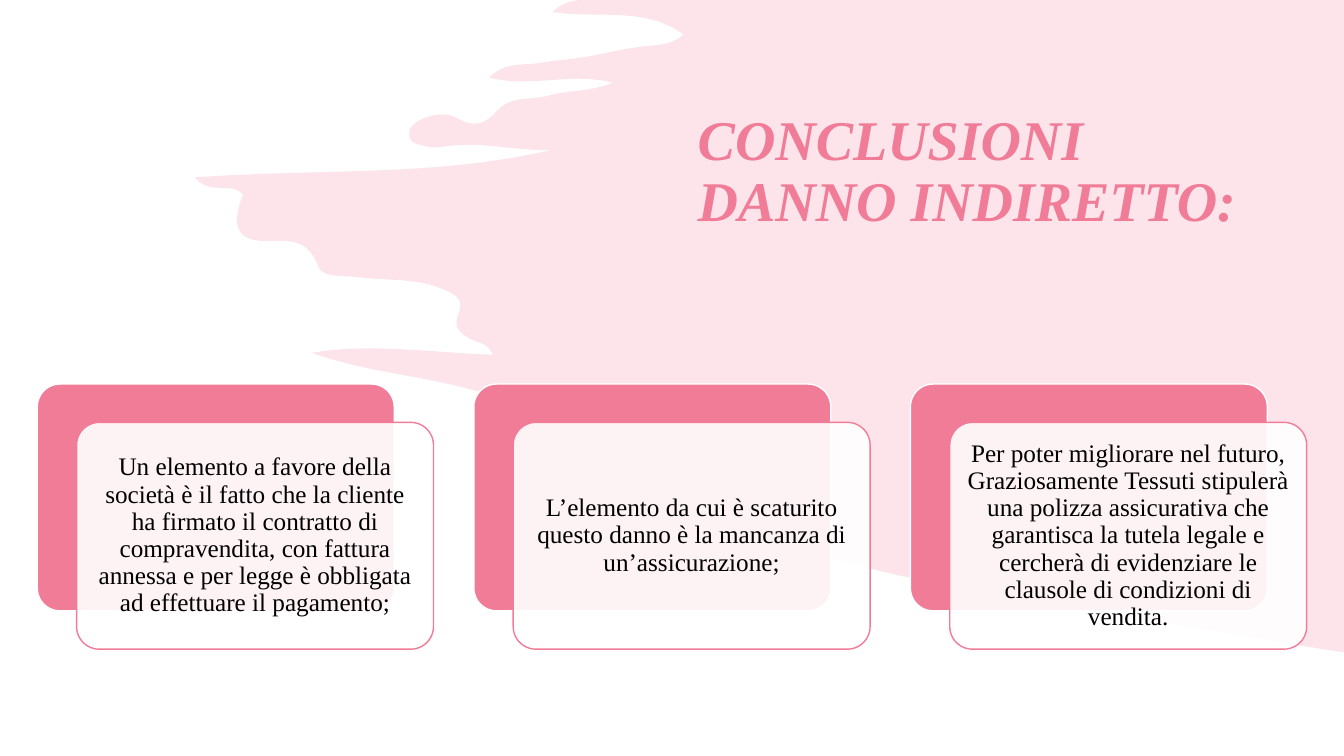
from lxml.etree import SubElement
from pptx import Presentation
from pptx.dml.color import RGBColor
from pptx.enum.shapes import MSO_SHAPE
from pptx.enum.text import MSO_ANCHOR, MSO_AUTO_SIZE, PP_ALIGN
from pptx.oxml.ns import qn
from pptx.util import Inches, Pt

PINK, WHITE, BLACK = "F07C98", "FFFFFF", "000000"
FONT = "Times New Roman"


def paint(shape, fill, alpha=100, line=None):
    """Set fill, opacity in percent and outline of a shape."""
    shape.shadow.inherit = False
    shape.fill.solid()
    shape.fill.fore_color.rgb = RGBColor.from_string(fill)
    if alpha < 100:
        color = shape.fill._xPr.find(qn("a:solidFill"))[0]
        SubElement(color, qn("a:alpha"), val=str(alpha * 1000))
    if line:
        shape.line.color.rgb = RGBColor.from_string(line)
        shape.line.width = Pt(1)
    else:
        shape.line.fill.background()


def write(shape, text, size, color, align, after):
    """Write one paragraph, vertically centred."""
    frame = shape.text_frame
    frame.word_wrap = True
    frame.auto_size = MSO_AUTO_SIZE.NONE
    frame.vertical_anchor = MSO_ANCHOR.MIDDLE
    paragraph = frame.paragraphs[0]
    paragraph.alignment = align
    paragraph.line_spacing = 0.9
    paragraph.space_before = Pt(0)
    paragraph.space_after = Pt(after)
    run = paragraph.add_run()
    run.text = text
    run.font.name = FONT
    run.font.size = Pt(size)
    run.font.color.rgb = RGBColor.from_string(color)
    return run


prs = Presentation()
prs.slide_width, prs.slide_height = Inches(13.33), Inches(7.5)
slide = prs.slides.add_slide(prs.slide_layouts[5])
slide.background.fill.solid()
slide.background.fill.fore_color.rgb = RGBColor.from_string(WHITE)

# Brush stroke: cubic curves (two control points, end point) sampled as points
brush_curves = [
    (5.67, 0.01, 5.57, 0.03, 5.48, 0.12), (5.95, 0.19, 6.39, 0.06, 6.78, 0.34),
    (6.64, 0.47, 6.48, 0.44, 6.32, 0.47), (6.16, 0.49, 6, 0.53, 5.84, 0.56),
    (5.67, 0.59, 5.49, 0.6, 5.32, 0.63), (5.18, 0.65, 5.02, 0.61, 4.85, 0.77),
    (5.27, 0.88, 5.66, 0.71, 6.08, 0.82), (5.84, 0.92, 5.63, 0.89, 5.44, 0.95),
    (5.27, 1, 5.06, 0.94, 4.92, 1.11), (4.81, 1.24, 4.69, 1.26, 4.55, 1.18),
    (4.42, 1.11, 4.28, 1.13, 4.15, 1.2), (4.11, 1.23, 4.06, 1.26, 4.06, 1.32),
    (4.06, 1.41, 4.12, 1.43, 4.18, 1.44), (4.24, 1.46, 4.31, 1.47, 4.37, 1.46),
    (4.74, 1.39, 5.1, 1.5, 5.47, 1.49), (4.31, 1.76, 3.14, 1.67, 1.93, 1.76),
    (2.09, 1.95, 2.29, 1.79, 2.41, 1.93), (2.3, 2.22, 2.34, 2.37, 2.58, 2.39),
    (2.8, 2.41, 3.04, 2.31, 3.16, 2.65), (3.2, 2.76, 3.41, 2.73, 3.55, 2.75),
    (3.84, 2.79, 4.14, 2.75, 4.42, 2.88), (4.53, 2.93, 4.6, 2.97, 4.55, 3.11),
    (4.49, 3.25, 4.56, 3.3, 4.66, 3.36), (4.73, 3.4, 4.83, 3.39, 4.89, 3.52),
    (4.28, 3.5, 3.69, 3.4, 3.09, 3.5), (3.75, 3.74, 4.47, 3.73, 5.12, 4.02),
    (5.1, 4.12, 4.95, 4.07, 4.94, 4.22), (5.28, 4.38, 5.69, 4.27, 6.05, 4.5),
    (5.84, 4.61, 5.65, 4.44, 5.45, 4.54), (5.52, 4.69, 8.4, 5.61, 8.92, 5.71),
    (9.78, 5.87, 11.95, 6.25, 13.18, 6.45),
]
STEPS = 10
x0, y0 = 5.75, 0
outline = [(x0, y0)]
for x1, y1, x2, y2, x3, y3 in brush_curves:
    for step in range(1, STEPS + 1):
        t = step / STEPS
        a, b, c, d = (1 - t) ** 3, 3 * t * (1 - t) ** 2, 3 * t * t * (1 - t), t ** 3
        outline.append((a * x0 + b * x1 + c * x2 + d * x3,
                        a * y0 + b * y1 + c * y2 + d * y3))
    x0, y0 = x3, y3
outline.append((13.33, 6.47))
builder = slide.shapes.build_freeform(Inches(13.33), 0)
builder.add_line_segments([(Inches(x), Inches(y)) for x, y in outline], close=True)
brush = builder.convert_to_shape()
paint(brush, PINK, alpha=20)

# Title, in front of the brush stroke
title = slide.shapes.title
title.left, title.top = Inches(6.82), Inches(0.68)
title.width, title.height = Inches(5.86), Inches(2.07)
heading = write(title, "CONCLUSIONI DANNO INDIRETTO:", 40, PINK, PP_ALIGN.LEFT, 6)
heading.font.bold = heading.font.italic = True
brush.element.addnext(title.element)

# Conclusions: a pink card with a translucent white card offset over it
conclusions = [
    "Un elemento a favore della società è il fatto che la cliente ha firmato il "
    "contratto di compravendita, con fattura annessa e per legge è obbligata ad "
    "effettuare il pagamento;",
    "L’elemento da cui è scaturito questo danno è la mancanza di un’assicurazione;",
    "Per poter migliorare nel futuro, Graziosamente Tessuti stipulerà una polizza "
    "assicurativa che garantisca la tutela legale e cercherà di evidenziare le "
    "clausole di condizioni di vendita.",
]
card_layers = [(0, 3.81, PINK, 100, WHITE), (0.39, 4.19, WHITE, 90, PINK)]
for column, conclusion in enumerate(conclusions):
    for offset, top, fill, alpha, line in card_layers:
        card = slide.shapes.add_shape(
            MSO_SHAPE.ROUNDED_RECTANGLE, Inches(0.37 + 4.33 * column + offset),
            Inches(top), Inches(3.54), Inches(2.25))
        card.adjustments[0] = 0.1
        paint(card, fill, alpha, line)
    frame = card.text_frame
    frame.margin_left = frame.margin_right = Inches(0.07)
    frame.margin_top = frame.margin_bottom = Inches(0.07)
    write(card, conclusion, 18, BLACK, PP_ALIGN.CENTER, 6.3)

prs.save("out.pptx")
